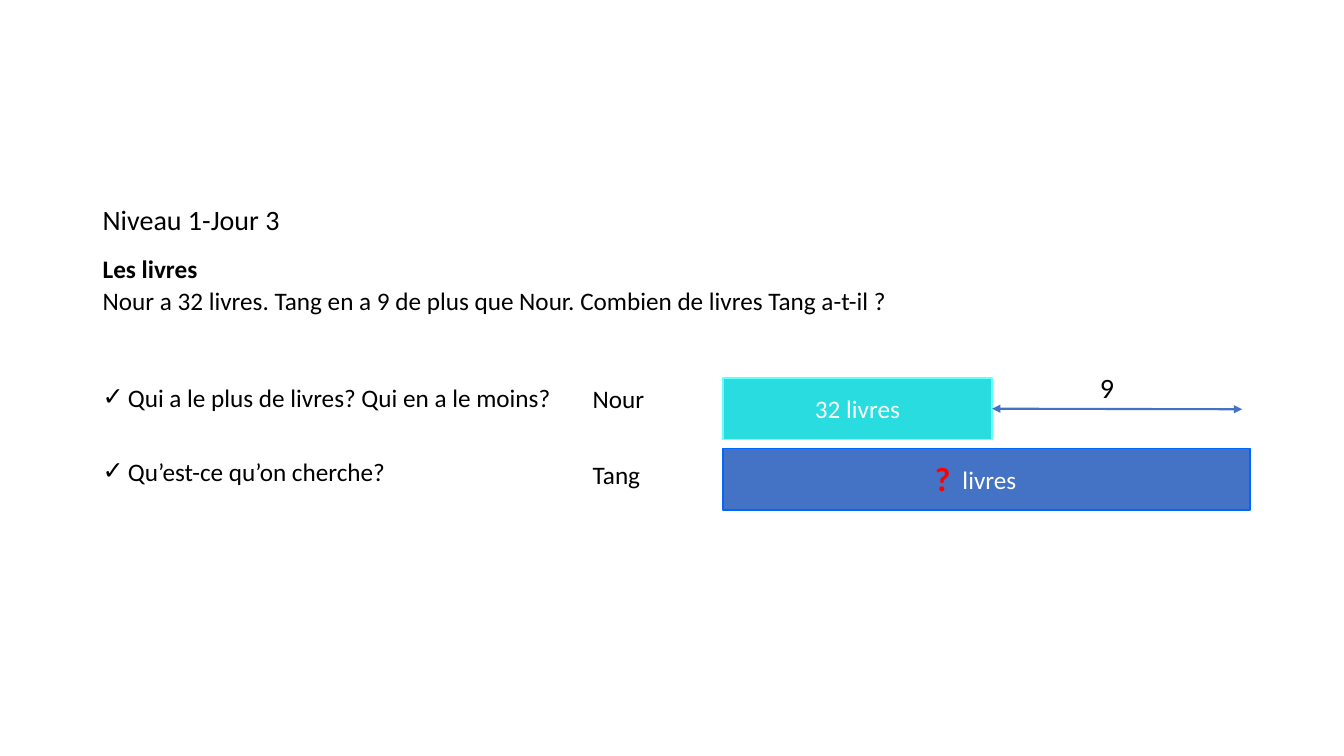
from lxml import etree
from pptx import Presentation
from pptx.dml.color import RGBColor
from pptx.enum.shapes import MSO_CONNECTOR, MSO_SHAPE
from pptx.enum.text import MSO_ANCHOR, PP_ALIGN
from pptx.oxml.ns import qn
from pptx.util import Inches, Pt

RECT, STRAIGHT = MSO_SHAPE.RECTANGLE, MSO_CONNECTOR.STRAIGHT
LEFT, CENTER = PP_ALIGN.LEFT, PP_ALIGN.CENTER
TOP, MIDDLE = MSO_ANCHOR.TOP, MSO_ANCHOR.MIDDLE
FONT = "Calibri"
COLORS = {"text": "000000", "white": "FFFFFF", "unknown": "FF0000",
          "nour": "28DCE0", "nour_line": "66FFFF",
          "tang": "4472C4", "tang_line": "0066FF", "arrow": "4472C4"}

# Content: text, font format, paragraph format (points), bullet
PROBLEM = [
    ("Niveau 1-Jour 3", {"size": 20}, {"line_spacing": 0.9, "space_before": 10}, None),
    ("Les livres", {"size": 18, "bold": True}, {"space_before": 10}, None),
    ("Nour a 32 livres. Tang en a 9 de plus que Nour. Combien de livres Tang a-t-il ?",
     {"size": 18}, {}, None),
    ("Qui a le plus de livres? Qui en a le moins?", {"size": 18}, {"space_before": 46}, "✓"),
    ("Qu’est-ce qu’on cherche?", {"size": 18}, {"space_before": 30}, "✓"),
]
PROBLEM_BOX = (0.92, 2, 11.5, 4.76)

# Bars: key, text, top, width
BARS = [("tang", " livres", 4.45, 5.23), ("nour", "32 livres", 3.75, 2.67)]
BAR_LEFT, BAR_HEIGHT = 7.17, 0.61
ARROW_END = (12.32, 4.06)

# Labels: text, box, size, colour, bold, alignment
LABELS = [
    ("Nour", (5.78, 3.75, 1.3, 0.4), 18, "text", False, LEFT),
    ("Tang", (5.78, 4.51, 1.3, 0.4), 18, "text", False, LEFT),
    ("9", (10.71, 3.63, 0.54, 0.44), 20, "text", False, CENTER),
    ("?", (9.08, 4.49, 0.54, 0.5), 24, "unknown", True, CENTER),
]


def rgb(key):
    return RGBColor.from_string(COLORS[key])


def write(p, text, color="text", size=18, bold=False):
    r = p.add_run()
    r.text = text
    r.font.color.rgb = rgb(color)
    for name, value in {"name": FONT, "size": Pt(size), "bold": bold}.items():
        setattr(r.font, name, value)


def add_bullet(p, char):
    pPr = p._p.get_or_add_pPr()
    indent = Inches(0.25)
    pPr.set("marL", str(indent))
    pPr.set("indent", str(-indent))
    etree.SubElement(pPr, qn("a:buFont"), typeface=FONT)
    etree.SubElement(pPr, qn("a:buChar"), char=char)


def add_text(s, box):
    tf = s.shapes.add_textbox(*map(Inches, box)).text_frame
    tf.word_wrap = True
    tf.vertical_anchor = TOP
    return tf


def add_bar(s, key, text, top, width):
    sp = s.shapes.add_shape(RECT, *map(Inches, (BAR_LEFT, top, width, BAR_HEIGHT)))
    sp.shadow.inherit = False
    sp.fill.solid()
    sp.fill.fore_color.rgb = rgb(key)
    sp.line.color.rgb = rgb(key + "_line")
    sp.line.width = Pt(1)
    tf = sp.text_frame
    tf.vertical_anchor = MIDDLE
    p = tf.paragraphs[0]
    p.alignment = CENTER
    write(p, text, "white")
    return sp


def add_arrow(s, bar, end):
    start = bar.left + bar.width, bar.top + bar.height // 2
    line = s.shapes.add_connector(STRAIGHT, *start, *map(Inches, end))
    line.begin_connect(bar, 3)
    line.line.color.rgb = rgb("arrow")
    line.line.width = Pt(1.5)
    ln = line.line._get_or_add_ln()
    for tag in ("a:headEnd", "a:tailEnd"):
        etree.SubElement(ln, qn(tag), type="triangle")
    etree.SubElement(line._element.spPr, qn("a:effectLst"))


def main():
    prs = Presentation()
    prs.slide_width, prs.slide_height = Inches(13.33), Inches(7.5)
    s = prs.slides.add_slide(prs.slide_layouts[6])

    # Problem and questions
    tf = add_text(s, PROBLEM_BOX)
    for i, (text, font, spacing, bullet) in enumerate(PROBLEM):
        p = tf.add_paragraph() if i else tf.paragraphs[0]
        p.line_spacing = spacing.get("line_spacing", 1.07)
        p.space_before = Pt(spacing.get("space_before", 0))
        if bullet:
            add_bullet(p, bullet)
        write(p, text, **font)

    # Bar model with the difference arrow
    bars = {bar[0]: add_bar(s, *bar) for bar in BARS}
    add_arrow(s, bars["nour"], ARROW_END)

    # Names and numbers
    for text, box, size, color, bold, align in LABELS:
        p = add_text(s, box).paragraphs[0]
        p.alignment = align
        write(p, text, color, size, bold)

    prs.save("out.pptx")


if __name__ == "__main__":
    main()
